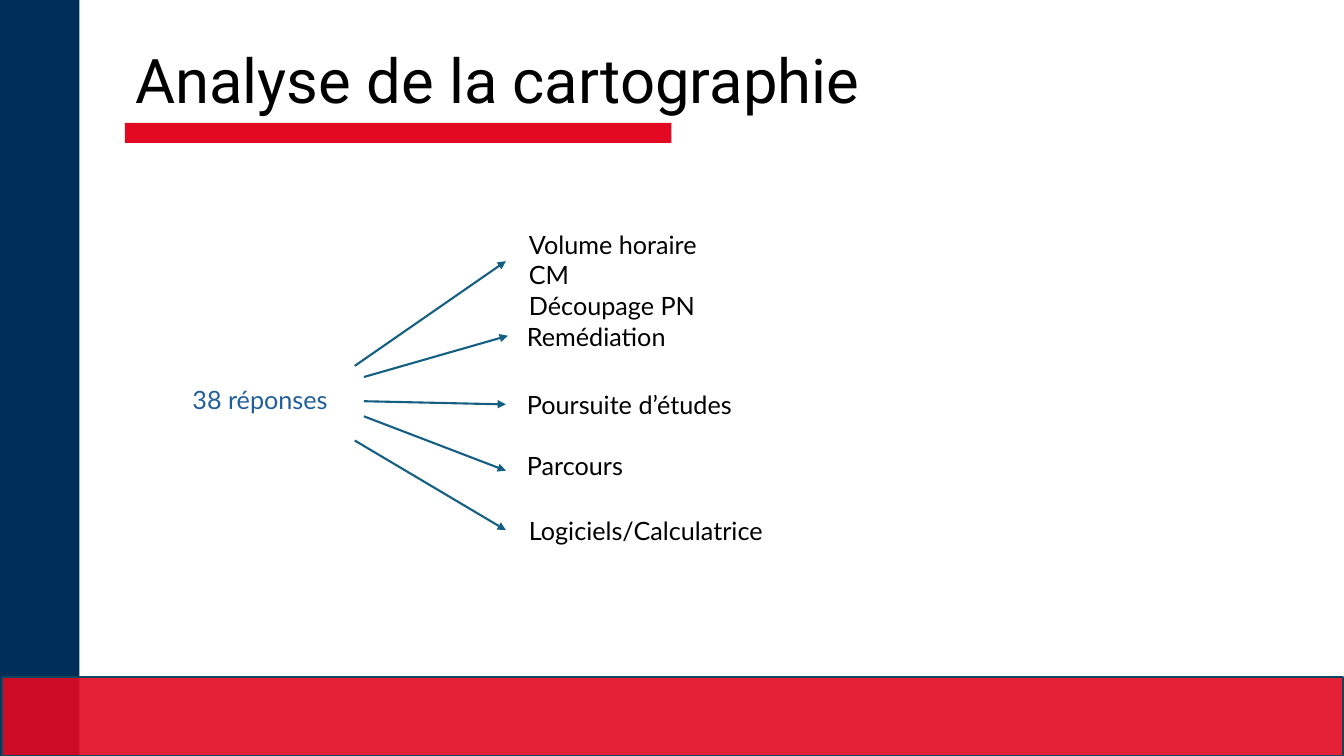
from lxml import etree
from pptx import Presentation
from pptx.dml import color
from pptx.enum import shapes, text
from pptx.oxml import ns
from pptx.util import Cm, Pt

NAVY, RED, BLACK = "002E5A", "E30922", "000000"
ANSWER_BLUE, ARROW_BLUE, BORDER = "215F9A", "156082", "104760"


def rgb(value):
    return color.RGBColor.from_string(value)


def add_child(parent, tag, **attributes):
    return etree.SubElement(parent, ns.qn(tag), attributes)


class SlideBuilder:
    title_font, body_font = "Roboto", "Lato"
    title_size, body_size = Pt(44), Pt(18)
    line_width = Pt(1.5)

    def __init__(self, presentation):
        self.slide = presentation.slides.add_slide(presentation.slide_layouts[5])

    def bar(self, left, top, width, height, fill, border=None, opacity=100):
        shape = self.slide.shapes.add_shape(
            shapes.MSO_SHAPE.RECTANGLE, Cm(left), Cm(top), Cm(width), Cm(height))
        shape.shadow.inherit = False
        shape.fill.solid()
        shape.fill.fore_color.rgb = rgb(fill)
        if opacity < 100:
            fill_color = shape.fill._xPr.find(".//" + ns.qn("a:srgbClr"))
            add_child(fill_color, "a:alpha", val=str(opacity * 1000))
        if border:
            shape.line.color.rgb = rgb(border)
            shape.line.width = self.line_width
        else:
            shape.line.fill.background()

    def title(self, words, left, top, width, height):
        shape = self.slide.shapes.title
        shape.left, shape.top = Cm(left), Cm(top)
        shape.width, shape.height = Cm(width), Cm(height)
        frame = shape.text_frame
        frame.text = words
        frame.auto_size = text.MSO_AUTO_SIZE.NONE
        frame.vertical_anchor = text.MSO_ANCHOR.MIDDLE
        paragraph = frame.paragraphs[0]
        paragraph.alignment = text.PP_ALIGN.LEFT
        paragraph.line_spacing = 0.9
        self.style(paragraph, self.title_font, self.title_size, BLACK)

    def label(self, words, left, top, width, height=1.02, ink=BLACK):
        box = self.slide.shapes.add_textbox(Cm(left), Cm(top), Cm(width), Cm(height))
        frame = box.text_frame
        frame.word_wrap = True
        frame.text = words
        for paragraph in frame.paragraphs:
            self.style(paragraph, self.body_font, self.body_size, ink)

    def style(self, paragraph, name, size, ink):
        paragraph.font.name = name
        paragraph.font.size = size
        paragraph.font.color.rgb = rgb(ink)

    def arrow(self, start, end):
        connector = self.slide.shapes.add_connector(
            shapes.MSO_CONNECTOR.STRAIGHT, *map(Cm, start + end))
        connector.line.color.rgb = rgb(ARROW_BLUE)
        connector.line.width = self.line_width
        add_child(connector.line._get_or_add_ln(), "a:tailEnd", type="triangle")
        add_child(connector._element.spPr, "a:effectLst")


def main():
    presentation = Presentation()
    presentation.slide_width, presentation.slide_height = Cm(33.87), Cm(19.05)
    builder = SlideBuilder(presentation)

    # Frame and title
    builder.bar(0, 0, 2, 19.05, NAVY)
    builder.bar(3.15, 3.1, 13.77, 0.5, RED)
    builder.bar(0.05, 17.05, 33.8, 2, RED, border=BORDER, opacity=90)
    builder.title("Analyse de la cartographie", 3.15, 1.09, 25.04, 2.01)

    # Answers and the themes they lead to
    builder.label("38 réponses", 4.6, 9.55, 5.28, ink=ANSWER_BLUE)
    builder.label("Volume horaire CM\nDécoupage PN", 13.08, 5.66, 5.7, 1.8)
    themes = [
        ("Remédiation", 13.03, 7.98),
        ("Poursuite d’études", 13.03, 9.68),
        ("Parcours", 13.03, 11.22),
        ("Logiciels/Calculatrice", 13.08, 12.85),
    ]
    for words, left, top in themes:
        builder.label(words, left, top, 7)

    # Arrows from the answers to each theme
    arrows = [
        ((8.94, 9.22), (12.75, 6.58)),
        ((9.17, 9.5), (12.8, 8.46)),
        ((9.17, 10.11), (12.75, 10.19)),
        ((9.17, 10.49), (12.75, 11.86)),
        ((8.94, 11.1), (12.75, 13.36)),
    ]
    for start, end in arrows:
        builder.arrow(start, end)

    presentation.save("out.pptx")


if __name__ == "__main__":
    main()
